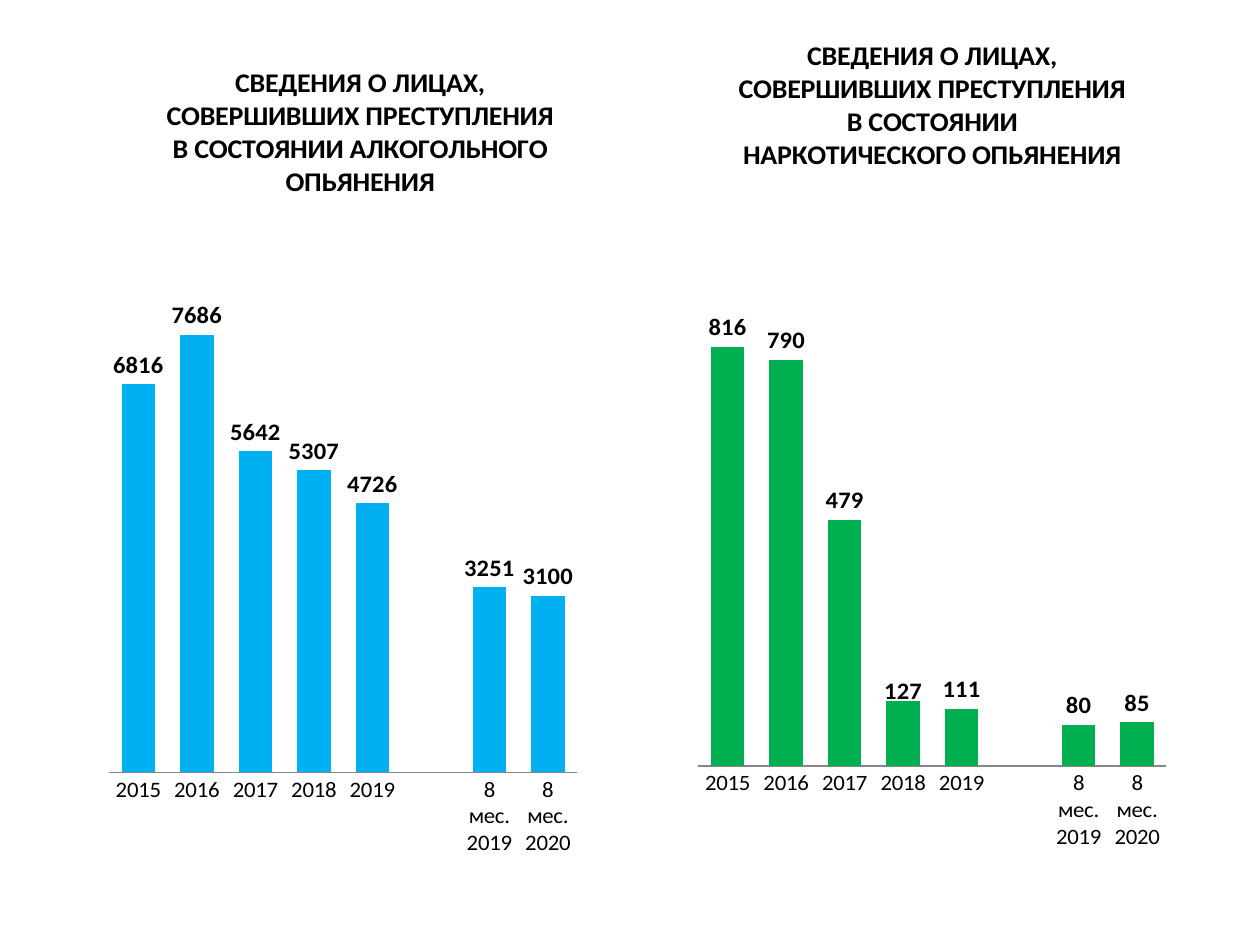
from lxml import etree
from pptx import Presentation
from pptx import util as u
from pptx.chart.data import CategoryChartData
from pptx.dml.color import RGBColor
from pptx.enum import chart as kinds
from pptx.oxml import ns

BLACK = RGBColor(0x00, 0x00, 0x00)
GRAY = RGBColor(0x86, 0x86, 0x86)
BLUE = RGBColor(0x00, 0xB0, 0xF0)
GREEN = RGBColor(0x00, 0xB0, 0x50)

PERIODS = ["2015", "2016", "2017", "2018", "2019", "", "8 мес. 2019", "8 мес. 2020"]
HEADING = "СВЕДЕНИЯ О ЛИЦАХ, СОВЕРШИВШИХ ПРЕСТУПЛЕНИЯ"


def place(parent, index, **settings):
    """Give a chart part a manual layout, as shares of the chart's size."""
    for old in parent.findall(ns.qn("c:layout")):
        parent.remove(old)
    layout = etree.Element(ns.qn("c:layout"))
    manual = etree.SubElement(layout, ns.qn("c:manualLayout"))
    for name, value in settings.items():
        etree.SubElement(manual, ns.qn(f"c:{name}")).set("val", str(value))
    parent.insert(index, layout)


class ChartPage:
    """The current slide and the style of its charts."""

    font = "Calibri"

    def __init__(self, deck):
        self.width, self.height = deck.slide_width, deck.slide_height
        self.page = deck.slides.add_slide(deck.slide_layouts[6])

    def style(self, font, size, bold=False):
        font.name, font.size, font.bold = self.font, u.Pt(size), bold
        font.color.rgb = BLACK

    def columns(self, area, values, color, top):
        """Add a column chart; area is given as shares of the slide."""
        data = CategoryChartData()
        data.categories = PERIODS
        data.add_series("Series 1", values)
        left, upper, wide, high = area
        chart = self.page.shapes.add_chart(
            kinds.XL_CHART_TYPE.COLUMN_CLUSTERED,
            int(left * self.width), int(upper * self.height),
            int(wide * self.width), int(high * self.height), data).chart
        self.style(chart.font, 18)
        chart.has_legend = False

        # Columns and their values
        plot = chart.plots[0]
        plot.gap_width = 75
        plot.vary_by_categories = False
        series = plot.series[0]
        series.format.fill.solid()
        series.format.fill.fore_color.rgb = color
        labels = series.data_labels
        labels.show_value = True
        labels.position = kinds.XL_LABEL_POSITION.OUTSIDE_END
        self.style(labels.font, 14, True)

        # Axes
        periods, amounts = chart.category_axis, chart.value_axis
        periods.major_tick_mark = kinds.XL_TICK_MARK.NONE
        periods.format.line.color.rgb = GRAY
        self.style(periods.tick_labels.font, 13)
        amounts.visible = False
        amounts.has_major_gridlines = False
        amounts.minimum_scale, amounts.maximum_scale = 0, top
        return chart

    def title(self, chart, lines, x, y):
        chart.has_title = True
        frame = chart.chart_title.text_frame
        for number, line in enumerate(lines):
            para = frame.add_paragraph() if number else frame.paragraphs[0]
            span = para.add_run()
            span.text = line
            self.style(span.font, 16, True)
        chart.chart_title.include_in_layout = False
        place(frame._txBody.getparent().getparent(), 1,
              xMode="edge", yMode="edge", x=x, y=y)

    def plot_area(self, chart, x, y, w, h):
        area = chart._chartSpace.find(".//" + ns.qn("c:plotArea"))
        place(area, 0, layoutTarget="inner", xMode="edge", yMode="edge",
              x=x, y=y, w=w, h=h)

    def shift_label(self, chart, point, y):
        series = chart.plots[0].series[0]
        label = series.points[point].data_label
        label.position = kinds.XL_LABEL_POSITION.OUTSIDE_END
        self.style(label.font, 14, True)
        place(series._element.find(".//" + ns.qn("c:dLbl")), 1, x=0, y=y)


def main():
    deck = Presentation()
    deck.slide_width, deck.slide_height = u.Inches(10), u.Inches(7.5)
    page = ChartPage(deck)

    # Alcohol, on the left
    alcohol = page.columns((0.081, 0.039, 0.402, 0.868),
                           [6816, 7686, 5642, 5307, 4726, None, 3251, 3100], BLUE, 9000)
    page.title(alcohol, [HEADING, "В СОСТОЯНИИ АЛКОГОЛЬНОГО ОПЬЯНЕНИЯ"], 0.12, 0.03)
    page.plot_area(alcohol, 0.014, 0.282, 0.924, 0.646)

    # Drugs, on the right
    drugs = page.columns((0.539, 0.028, 0.402, 0.872),
                         [816, 790, 479, 127, 111, None, 80, 85], GREEN, 900)
    page.title(drugs, [HEADING, "В СОСТОЯНИИ НАРКОТИЧЕСКОГО ОПЬЯНЕНИЯ"], 0.11, 0.01)
    page.plot_area(drugs, 0.038, 0.349, 0.924, 0.582)
    page.shift_label(drugs, 3, 0.013)

    deck.save("out.pptx")


if __name__ == "__main__":
    main()
